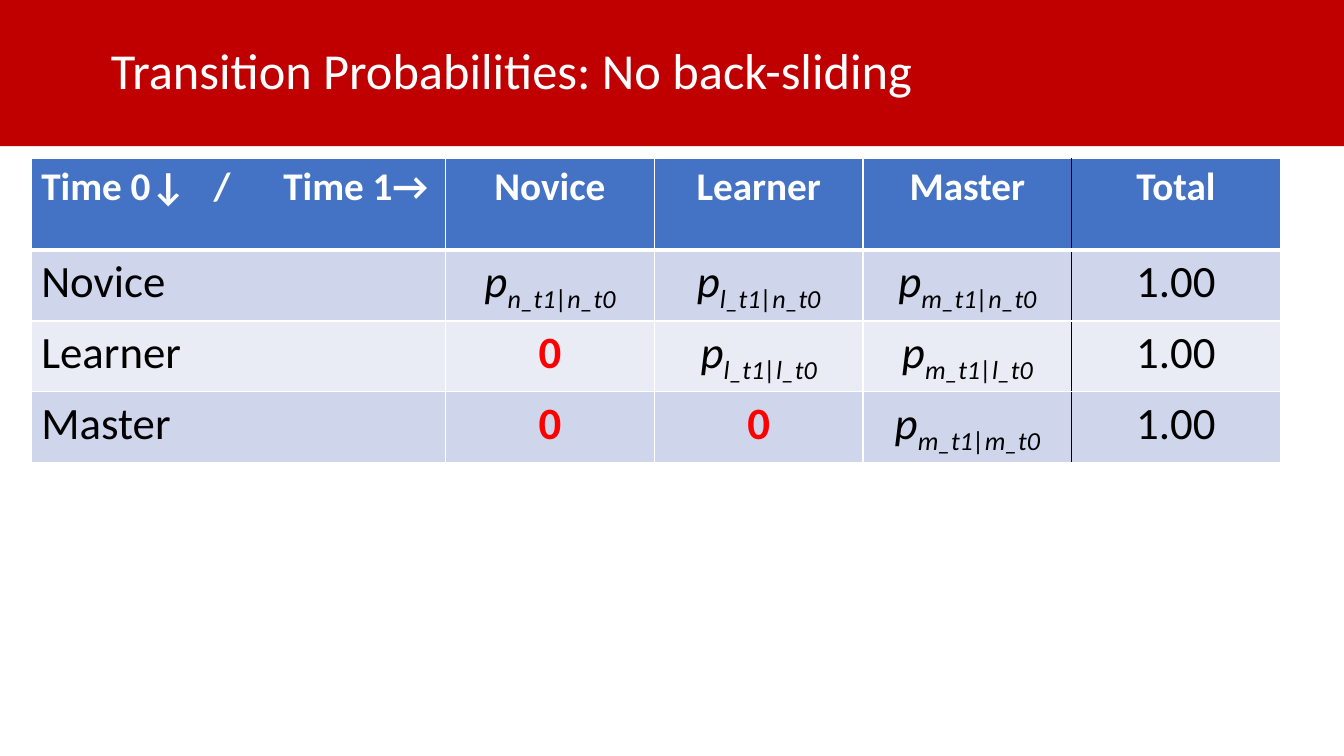
import pptx
import pptx.dml.color
import pptx.enum.shapes
import pptx.enum.text
import pptx.oxml.ns
import pptx.util
from lxml import etree

Inches = pptx.util.Inches
Pt = pptx.util.Pt
FONT = "Calibri"
HUES = {
    "red": "C00000", "zero": "FF0000", "head": "4472C4", "odd": "CFD5EA",
    "even": "E9EBF5", "white": "FFFFFF", "black": "000000",
}
HEADS = ["Time 0↓\t/\tTime 1→", "Novice", "Learner", "Master", "Total"]
# A cell "p:x" holds p with subscript x.
ROWS = [
    ["Novice", "p:n_t1|n_t0", "p:l_t1|n_t0", "p:m_t1|n_t0", "1.00"],
    ["Learner", "0", "p:l_t1|l_t0", "p:m_t1|l_t0", "1.00"],
    ["Master", "0", "0", "p:m_t1|m_t0", "1.00"],
]
WIDTHS = [4.11] + [2.07] * 4
HEIGHTS = [0.91] + [0.7] * 3
STOPS = [1.71, 2.4]


def hue(name):
    return pptx.dml.color.RGBColor.from_string(HUES[name])


def style(para, size, name, bold=False, italic=False):
    font = para.font
    font.name, font.size = FONT, Pt(size)
    font.bold, font.italic = bold, italic
    font.color.rgb = hue(name)


def child(node, tag, **attrs):
    return etree.SubElement(node, pptx.oxml.ns.qn(tag), **attrs)


def edge(cell, side, name, width):
    """Draw one border; call in the order L, R, T, B, before the fill."""
    line = child(cell._tc.get_or_add_tcPr(), "a:ln" + side, w=str(Pt(width)))
    child(child(line, "a:solidFill"), "a:srgbClr", val=HUES[name])


def tabs(para, stops):
    group = etree.Element(pptx.oxml.ns.qn("a:tabLst"))
    for stop in stops:
        child(group, "a:tab", pos=str(Inches(stop)), algn="l")
    para._p.get_or_add_pPr().insert(0, group)


def write(para, text):
    base, colon, index = text.partition(":")
    para.add_run().text = base
    if colon:
        sub = para.add_run()
        sub.text = index
        sub.font._element.set("baseline", "-25000")


def banner(slide, text):
    box = slide.shapes.add_shape(
        pptx.enum.shapes.MSO_SHAPE.RECTANGLE,
        Inches(0), Inches(0), Inches(13.33), Inches(1.45))
    box.shadow.inherit = False
    box.fill.solid()
    box.fill.fore_color.rgb = hue("red")
    box.line.fill.background()
    frame = box.text_frame
    frame.word_wrap = True
    frame.margin_left = Inches(1.1)
    frame.vertical_anchor = pptx.enum.text.MSO_ANCHOR.MIDDLE
    para = frame.paragraphs[0]
    para.text = text
    para.alignment = pptx.enum.text.PP_ALIGN.LEFT
    para.line_spacing = 0.9
    style(para, 36, "white")


def fill(cell, text, row, col):
    """Set the borders, colour and text of one table cell."""
    edge(cell, "L", "black" if col == 4 else "white", 1)
    edge(cell, "R", "black" if col == 3 else "white", 1)
    edge(cell, "T", "white", 3 if row == 1 else 1)
    edge(cell, "B", "white", 3 if row == 0 else 1)
    cell.fill.solid()
    band = "head" if row == 0 else "odd" if row % 2 else "even"
    cell.fill.fore_color.rgb = hue(band)
    para = cell.text_frame.paragraphs[0]
    write(para, text)
    if row == 0:
        style(para, 28, "white", bold=True)
    elif text == "0":
        style(para, 32, "zero", bold=True)
    else:
        style(para, 32, "black", italic=":" in text)
    if col:
        para.alignment = pptx.enum.text.PP_ALIGN.CENTER
    elif row == 0:
        tabs(para, STOPS)


def grid(slide, rows):
    table = slide.shapes.add_table(
        len(rows), len(WIDTHS), Inches(0.31), Inches(1.57),
        Inches(sum(WIDTHS)), Inches(sum(HEIGHTS))).table
    for col, width in zip(table.columns, WIDTHS):
        col.width = Inches(width)
    for row, height in zip(table.rows, HEIGHTS):
        row.height = Inches(height)
    for r, texts in enumerate(rows):
        for c, text in enumerate(texts):
            fill(table.cell(r, c), text, r, c)


def main():
    deck = pptx.Presentation()
    deck.slide_width, deck.slide_height = Inches(13.33), Inches(7.5)
    slide = deck.slides.add_slide(deck.slide_layouts[6])
    banner(slide, "Transition Probabilities: No back-sliding")
    grid(slide, [HEADS] + ROWS)
    deck.save("out.pptx")


if __name__ == "__main__":
    main()
